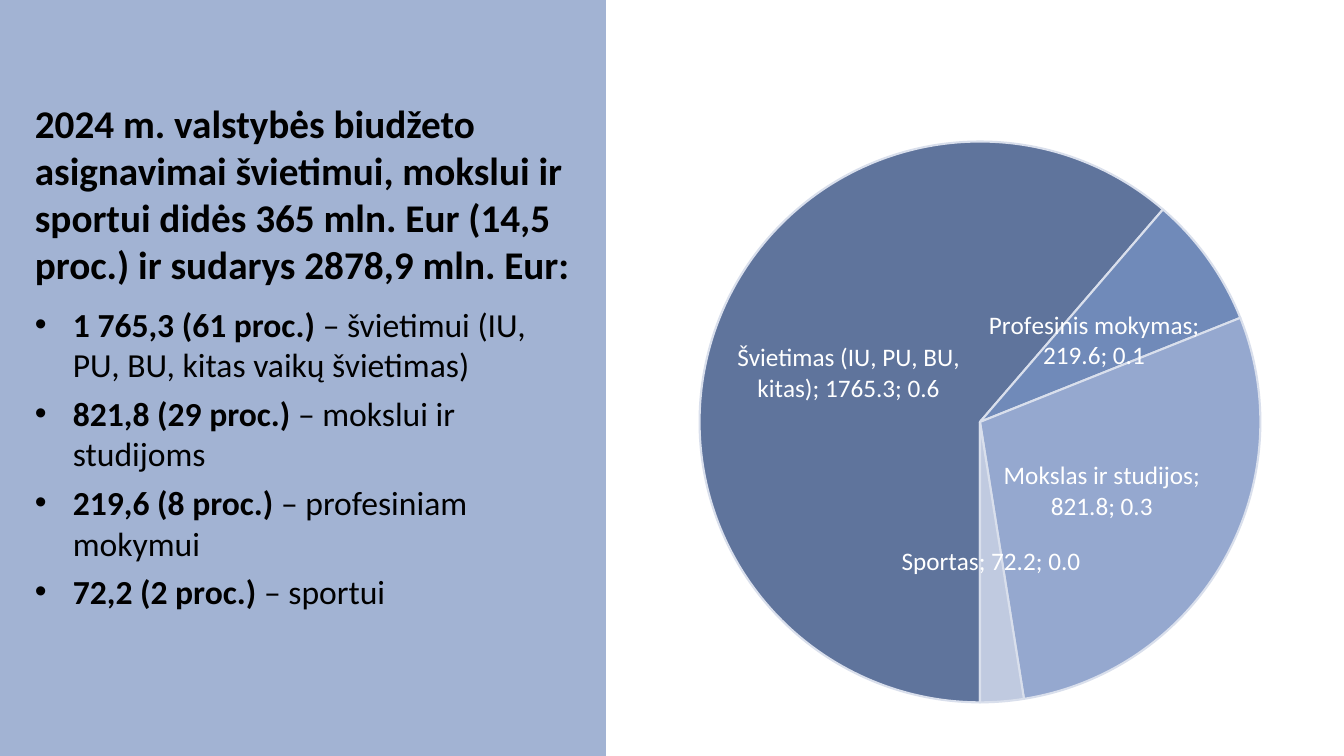
from lxml import etree
from pptx import Presentation
from pptx import util as u
from pptx.chart.data import CategoryChartData
from pptx.dml.color import RGBColor
from pptx.enum import chart as charts, shapes, text
from pptx.oxml import ns

EMU_PER_PX = 12192000 / 1344
PANEL = RGBColor(0xA2, 0xB3, 0xD3)
BLACK = RGBColor(0, 0, 0)
WHITE = RGBColor(0xFF, 0xFF, 0xFF)
SLICE_EDGE = RGBColor(0xD9, 0xDF, 0xEC)

HEADING = ("2024 m. valstybės biudžeto asignavimai švietimui, mokslui ir sportui "
           "didės 365 mln. Eur (14,5 proc.) ir sudarys 2878,9 mln. Eur:")
ALLOCATIONS = [
    ("1 765,3 (61 proc.) ", "– švietimui (IU, PU, BU, kitas vaikų švietimas)"),
    ("821,8 (29 proc.) ", "– mokslui ir studijoms"),
    ("219,6 (8 proc.)", " – profesiniam mokymui"),
    ("72,2 (2 proc.) ", "– sportui"),
]
SLICES = [
    ("Švietimas (IU, PU, BU, kitas)", 1765.3, RGBColor(0x5F, 0x74, 0x9C)),
    ("Profesinis mokymas", 219.6, RGBColor(0x70, 0x8A, 0xB9)),
    ("Mokslas ir studijos", 821.8, RGBColor(0x95, 0xA8, 0xCF)),
    ("Sportas", 72.2, RGBColor(0xC0, 0xCA, 0xE0)),
]


def px(*lengths):
    return [u.Emu(round(length * EMU_PER_PX)) for length in lengths]


def add_panel(slide, *place):
    panel = slide.shapes.add_shape(shapes.MSO_SHAPE.RECTANGLE, *px(*place))
    panel.shadow.inherit = False
    panel.fill.solid()
    panel.fill.fore_color.rgb = PANEL
    panel.line.fill.background()


def add_span(para, words, size, bold):
    span = para.add_run()
    span.text = words
    span.font.name = "Calibri"
    span.font.size = u.Pt(size)
    span.font.bold = bold
    span.font.color.rgb = BLACK


def set_bullet(para, indent):
    properties = para._p.get_or_add_pPr()
    width = px(indent)[0]
    properties.set("marL", str(width))
    properties.set("indent", str(-width))
    etree.SubElement(properties, ns.qn("a:buFont")).set("typeface", "Arial")
    etree.SubElement(properties, ns.qn("a:buChar")).set("char", "•")


def add_summary(slide, *place):
    frame = slide.shapes.add_textbox(*px(*place)).text_frame
    frame.word_wrap = True
    frame.auto_size = text.MSO_AUTO_SIZE.SHAPE_TO_FIT_TEXT
    heading = frame.paragraphs[0]
    heading.space_after = u.Pt(12)
    add_span(heading, HEADING, 28, True)
    for amount, purpose in ALLOCATIONS:
        para = frame.add_paragraph()
        set_bullet(para, 38)
        para.space_after = u.Pt(6)
        add_span(para, amount, 24, True)
        add_span(para, purpose, 24, False)


def set_plot_area(chart, **fractions):
    """Place the inner plot area by fractions of the chart frame."""
    plot_area = chart._chartSpace.chart.plotArea
    for old in plot_area.findall(ns.qn("c:layout")):
        plot_area.remove(old)
    layout = etree.Element(ns.qn("c:layout"))
    plot_area.insert(0, layout)
    manual = etree.SubElement(layout, ns.qn("c:manualLayout"))
    settings = {"layoutTarget": "inner", "xMode": "edge", "yMode": "edge", **fractions}
    for name, value in settings.items():
        etree.SubElement(manual, ns.qn(f"c:{name}")).set("val", str(value))


def set_first_angle(plot, degrees):
    pie = plot._element
    angle = pie.find(ns.qn("c:firstSliceAng"))
    if angle is None:
        angle = etree.SubElement(pie, ns.qn("c:firstSliceAng"))
    angle.set("val", str(degrees))


def format_labels(labels):
    labels.show_category_name = True
    labels.show_value = True
    labels.show_percentage = True
    labels.number_format = "0.0"
    labels.number_format_is_linked = False
    labels.position = charts.XL_LABEL_POSITION.CENTER
    labels.font.name = "Calibri"
    labels.font.size = u.Pt(18)
    labels.font.color.rgb = WHITE
    separator = etree.Element(ns.qn("c:separator"))
    separator.text = "; "
    labels._element.find(ns.qn("c:showBubbleSize")).addnext(separator)


def add_pie(slide, *place):
    data = CategoryChartData(number_format="0.0")
    data.categories = [name for name, _, _ in SLICES]
    data.add_series("Series 1", [value for _, value, _ in SLICES])
    chart = slide.shapes.add_chart(charts.XL_CHART_TYPE.PIE, *px(*place), data).chart
    chart.has_title = False
    chart.has_legend = False
    chart.font.name = "Arial"
    chart.font.size = u.Pt(10)
    chart.font.color.rgb = BLACK
    set_plot_area(chart, x=0.09, y=0.02, w=0.82, h=0.95)
    plot = chart.plots[0]
    plot.vary_by_categories = True
    set_first_angle(plot, 180)
    series = plot.series[0]
    for index, (_, _, colour) in enumerate(SLICES):
        point = series.points[index].format
        point.fill.solid()
        point.fill.fore_color.rgb = colour
        point.line.color.rgb = SLICE_EDGE
        point.line.width = u.Pt(1.5)
    format_labels(series.data_labels)


def main():
    deck = Presentation()
    deck.slide_width, deck.slide_height = px(1344, 756)
    slide = deck.slides.add_slide(deck.slide_layouts[6])
    add_panel(slide, 0, 0, 606, 756)
    add_summary(slide, 25, 94, 556, 527)
    add_pie(slide, 638, 129, 684, 592)
    deck.save("out.pptx")


if __name__ == "__main__":
    main()
